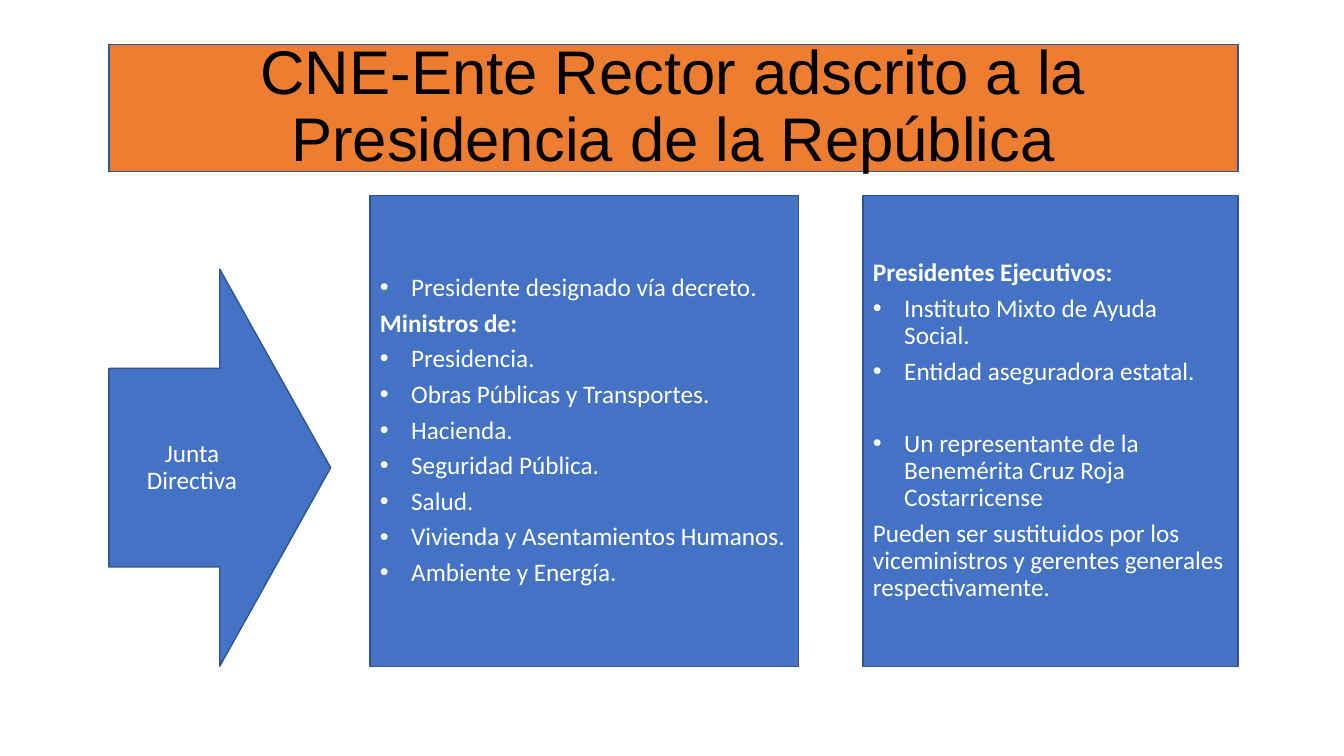
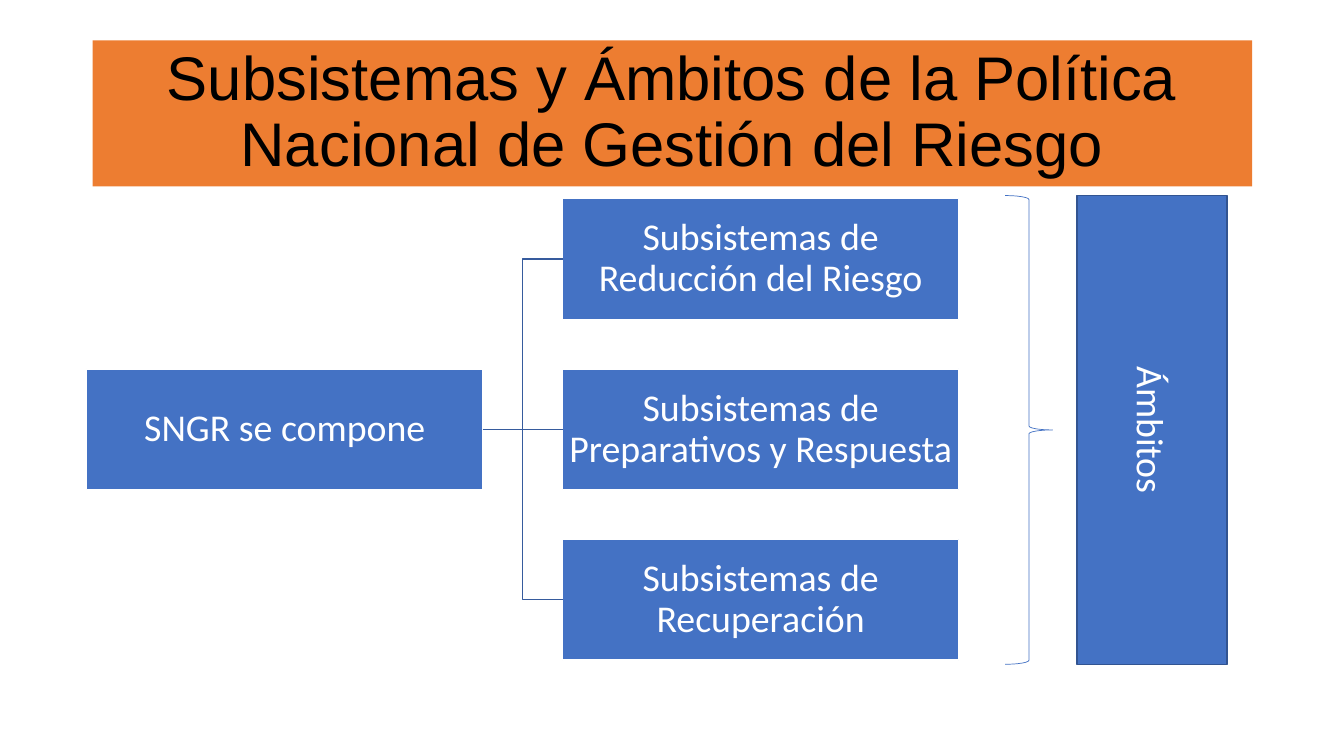
from dataclasses import dataclass
from typing import Optional

from lxml import etree
from pptx import Presentation
from pptx import util as u
from pptx.dml.color import RGBColor
from pptx.enum import shapes, text
from pptx.oxml import ns

PX = 9144  # one px is a hundredth of an inch
COLORS = {
    "band": "ED7D31",
    "box": "4472C4",
    "edge": "325491",
    "link": "365B9D",
    "white": "FFFFFF",
    "black": "000000",
}
SHAPE = shapes.MSO_SHAPE
CONN = shapes.MSO_CONNECTOR
CENTER = text.PP_ALIGN.CENTER
LEFT = text.PP_ALIGN.LEFT


@dataclass(frozen=True)
class Rect:
    x: int
    y: int
    w: int
    h: int


@dataclass(frozen=True)
class Para:
    words: str
    bullet: bool = False
    bold: bool = False
    after: int = 6


@dataclass(frozen=True)
class Style:
    size: int
    font: str = "Calibri"
    color: str = "white"
    align: text.PP_ALIGN = CENTER
    spacing: Optional[float] = 0.9


TITLE = Style(44, "Arial", "black")
LABEL = Style(18)
BODY = Style(18, align=LEFT)
NODE = Style(27)
SIDE = Style(27, spacing=None)


def px(n: int) -> u.Emu:
    return u.Emu(n * PX)


def rgb(name: str) -> RGBColor:
    return RGBColor.from_string(COLORS[name])


def add_bullet(p) -> None:
    pPr = p._p.get_or_add_pPr()
    pPr.set("marL", str(px(31)))
    pPr.set("indent", str(-px(31)))
    etree.SubElement(pPr, ns.qn("a:buFont")).set("typeface", "Arial")
    etree.SubElement(pPr, ns.qn("a:buChar")).set("char", "•")


def write(sp, paras: list[Para], style: Style, inset: Optional[int] = None) -> None:
    tf = sp.text_frame
    tf.word_wrap = True
    tf.vertical_anchor = text.MSO_ANCHOR.MIDDLE
    if inset is not None:
        tf.margin_left = tf.margin_right = px(inset)
        tf.margin_top = tf.margin_bottom = px(inset)
    for i, para in enumerate(paras):
        p = tf.add_paragraph() if i else tf.paragraphs[0]
        if para.bullet:
            add_bullet(p)
        p.alignment = style.align
        p.space_after = u.Pt(para.after)
        if style.spacing:
            p.line_spacing = style.spacing
        r = p.add_run()
        r.text = para.words
        r.font.name = style.font
        r.font.size = u.Pt(style.size)
        r.font.bold = para.bold
        r.font.color.rgb = rgb(style.color)


def add_shape(s, kind: SHAPE, box: Rect, fill: Optional[str],
              line: Optional[str], width: float = 1):
    sp = s.shapes.add_shape(kind, px(box.x), px(box.y), px(box.w), px(box.h))
    sp.shadow.inherit = False
    if fill:
        sp.fill.solid()
        sp.fill.fore_color.rgb = rgb(fill)
    else:
        sp.fill.background()
    if line:
        sp.line.color.rgb = rgb(line)
        sp.line.width = u.Pt(width)
    else:
        sp.line.fill.background()
    return sp


def add_title(s, box: Rect, words: str, line: Optional[str] = None) -> None:
    write(add_shape(s, SHAPE.RECTANGLE, box, "band", line), [Para(words)], TITLE)


def add_node(s, box: Rect, words: str):
    sp = add_shape(s, SHAPE.RECTANGLE, box, "box", "white")
    write(sp, [Para(words)], NODE, inset=2)
    return sp


def link(s, start, end) -> None:
    kind = CONN.STRAIGHT if start.top == end.top else CONN.ELBOW
    cn = s.shapes.add_connector(kind, 0, 0, 0, 0)
    cn.begin_connect(start, 3)  # right side
    cn.end_connect(end, 1)  # left side
    cn.line.color.rgb = rgb("link")
    cn.line.width = u.Pt(1)
    etree.SubElement(cn.element.spPr, ns.qn("a:effectLst"))


def board_slide(s) -> None:
    add_title(s, Rect(108, 44, 1120, 126),
              "CNE-Ente Rector adscrito a la Presidencia de la República", "edge")
    arrow = add_shape(s, SHAPE.RIGHT_ARROW, Rect(108, 267, 220, 394), "box", "edge")
    write(arrow, [Para("Junta Directiva")], LABEL)

    # Member lists
    ministries = ["Presidencia.", "Obras Públicas y Transportes.", "Hacienda.",
                  "Seguridad Pública.", "Salud.",
                  "Vivienda y Asentamientos Humanos.", "Ambiente y Energía."]
    ministers = [
        Para("Presidente designado vía decreto.", bullet=True),
        Para("Ministros de:", bold=True),
        *(Para(name, bullet=True) for name in ministries),
    ]
    executives = [
        Para("Presidentes Ejecutivos:", bold=True),
        Para("Instituto Mixto de Ayuda Social.", bullet=True),
        Para("Entidad aseguradora estatal.", bullet=True, after=32),
        Para("Un representante de la Benemérita Cruz Roja Costarricense", bullet=True),
        Para("Pueden ser sustituidos por los viceministros y gerentes generales "
             "respectivamente."),
    ]
    for x, w, paras in ((367, 425, ministers), (856, 372, executives)):
        panel = add_shape(s, SHAPE.RECTANGLE, Rect(x, 194, w, 467), "box", "edge")
        write(panel, paras, BODY)


def subsystems_slide(s) -> None:
    add_title(s, Rect(92, 40, 1150, 145),
              "Subsistemas y Ámbitos de la Política Nacional de Gestión del Riesgo")

    # Tree
    top, step, w, h = 197, 169, 393, 120
    root = add_node(s, Rect(86, top + step, w, h), "SNGR se compone")
    branches = ["Subsistemas de Reducción del Riesgo",
                "Subsistemas de Preparativos y Respuesta",
                "Subsistemas de Recuperación"]
    for i, words in enumerate(branches):
        link(s, root, add_node(s, Rect(558, top + i * step, w, h), words))

    # Scope bar and brace
    side = add_shape(s, SHAPE.RECTANGLE, Rect(1068, 194, 149, 465), "box", "edge")
    write(side, [Para("Ámbitos", after=0)], SIDE)
    side.element.txBody.bodyPr.set("vert", "vert")
    add_shape(s, SHAPE.RIGHT_BRACE, Rect(997, 194, 47, 465), None, "box", 0.5)


def main() -> None:
    prs = Presentation()
    prs.slide_width, prs.slide_height = px(1333), px(750)
    for build in (board_slide, subsystems_slide):
        build(prs.slides.add_slide(prs.slide_layouts[6]))
    prs.save("out.pptx")


if __name__ == "__main__":
    main()
